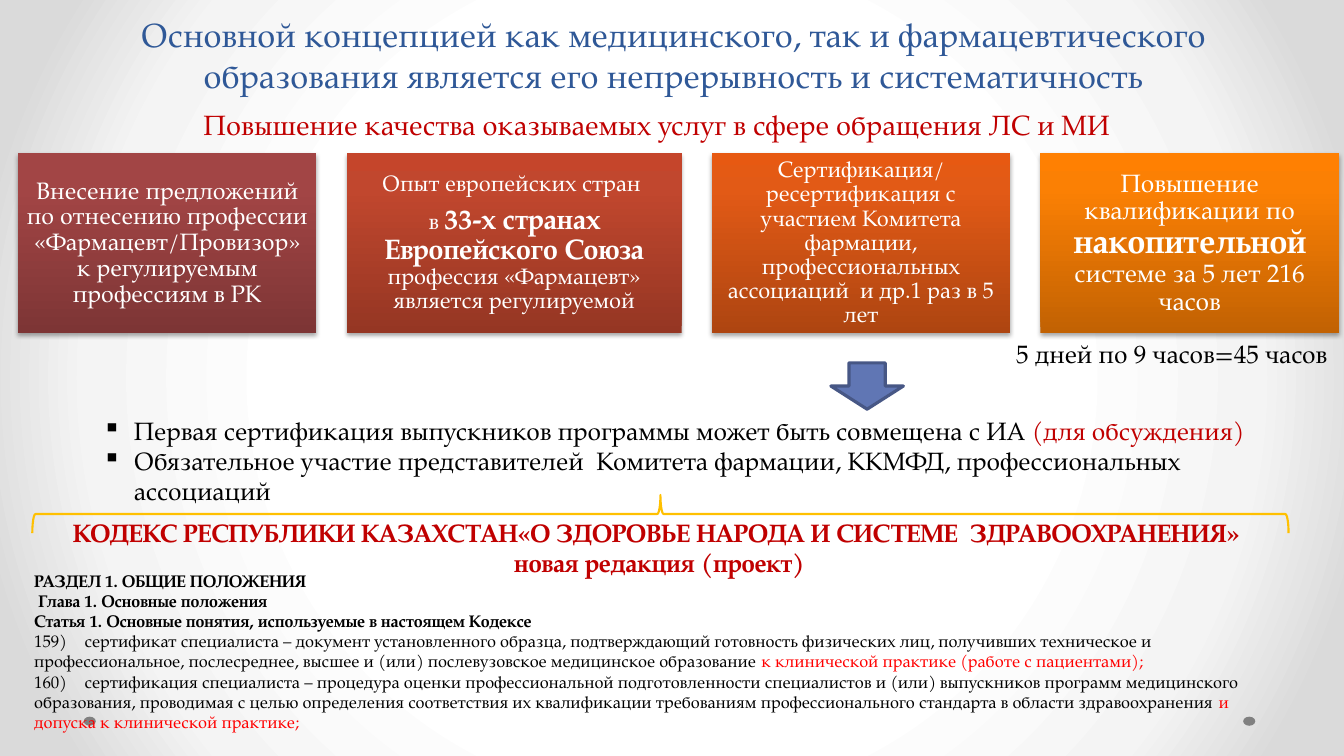
from dataclasses import dataclass

from pptx import Presentation
from pptx.dml.color import RGBColor
from pptx.enum.shapes import MSO_SHAPE
from pptx.enum.text import MSO_ANCHOR, MSO_AUTO_SIZE, PP_ALIGN
from pptx.oxml import parse_xml
from pptx.oxml.ns import nsdecls, qn
from pptx.util import Inches, Pt


@dataclass(frozen=True)
class Theme:
    font: str = "TeX Gyre Pagella"
    title: str = "2F5897"
    accent: str = "C00000"
    highlight: str = "FF0000"
    text: str = "000000"
    light: str = "FFFFFF"
    dot: str = "808080"
    arrow: str = "6076B4"
    arrow_line: str = "475785"
    brace: str = "FFC000"
    title_size: int = 24
    subtitle_size: int = 20
    body_size: int = 18
    card_size: int = 16
    law_size: int = 12


theme = Theme()


def paint_gradient(element, stops, direction):
    """Replace the gradient in element; stops are (percent, colour) pairs."""
    stop_xml = "".join(
        f'<a:gs pos="{percent * 1000}"><a:srgbClr val="{color}"/></a:gs>'
        for percent, color in stops)
    gradient = next(element.iter(qn("a:gradFill")))
    gradient.getparent().replace(gradient, parse_xml(
        f'<a:gradFill {nsdecls("a")} rotWithShape="1">'
        f"<a:gsLst>{stop_xml}</a:gsLst>{direction}</a:gradFill>"))


def write_text(shape, paragraphs, size, color, align=PP_ALIGN.LEFT, bold=False):
    """Fill shape; a paragraph is a list of (text, differing font settings)."""
    frame = shape.text_frame
    frame.word_wrap = True
    frame.auto_size = MSO_AUTO_SIZE.NONE
    for index, runs in enumerate(paragraphs):
        paragraph = frame.paragraphs[0] if index == 0 else frame.add_paragraph()
        paragraph.alignment = align
        paragraph.font.name = theme.font
        paragraph.font.size = Pt(size)
        paragraph.font.bold = bold
        paragraph.font.color.rgb = RGBColor.from_string(color)
        for text, changes in runs:
            run = paragraph.add_run()
            run.text = text
            if "size" in changes:
                run.font.size = Pt(changes["size"])
            if "bold" in changes:
                run.font.bold = changes["bold"]
            if "color" in changes:
                run.font.color.rgb = RGBColor.from_string(changes["color"])


presentation = Presentation()
presentation.slide_width = Inches(13.33)
presentation.slide_height = Inches(7.5)
slide = presentation.slides.add_slide(presentation.slide_layouts[5])
shapes = slide.shapes

# Background
slide.background.fill.gradient()
paint_gradient(
    slide.element, [(50, "FFFFFF"), (76, "F4F4F4"), (92, "DADADA")],
    '<a:path path="circle"><a:fillToRect l="50000" t="50000" r="50000" b="50000"/></a:path>')

# Corner dots
for left in (0.83, 12.33):
    dot = shapes.add_shape(
        MSO_SHAPE.OVAL, Inches(left), Inches(7.11), Inches(0.12), Inches(0.09))
    dot.shadow.inherit = False
    dot.fill.solid()
    dot.fill.fore_color.rgb = RGBColor.from_string(theme.dot)
    dot.line.fill.background()

# Title
title = shapes.title
title.left, title.top = Inches(0.68), Inches(-0.16)
title.width, title.height = Inches(12), Inches(1.15)
title.text_frame.vertical_anchor = MSO_ANCHOR.BOTTOM
write_text(title, [[(
    "Основной концепцией как медицинского, так и фармацевтического "
    "образования является его непрерывность и систематичность", {})]],
    theme.title_size, theme.title, PP_ALIGN.CENTER)

# Cards: width, text size, gradient colours from bottom to top, paragraphs
cards = [
    (2.96, 17, ("7D3535", "A24545", "A44343"), [[(
        "Внесение предложений по отнесению профессии «Фармацевт/Провизор» "
        "к регулируемым профессиям в РК", {})]]),
    (3.32, theme.card_size, ("953623", "C1472E", "C5452B"), [
        [("Опыт европейских стран ", {})],
        [("в ", {}),
         ("33-х странах Европейского Союза", {"size": 20, "bold": True}),
         (" ", {"size": 18, "bold": True}),
         ("профессия «Фармацевт» является регулируемой", {})]]),
    (2.96, theme.card_size, ("AE4511", "E25A16", "E75912"), [[(
        "Сертификация/ресертификация с участием Комитета фармации, "
        "профессиональных ассоциаций  и др.1 раз в 5 лет", {})]]),
    (2.96, theme.body_size, ("C26203", "FB8004", "FF8002"), [[
        ("Повышение квалификации по ", {}),
        ("накопительной ", {"size": 24, "bold": True}),
        ("системе за 5 лет 216 часов", {})]]),
]
card_gap = 0.3
card_left = 0.18
for width, size, colors, paragraphs in cards:
    card = shapes.add_shape(
        MSO_SHAPE.RECTANGLE, Inches(card_left), Inches(1.52), Inches(width), Inches(1.78))
    card_left += width + card_gap
    card.line.fill.background()
    card.fill.gradient()
    paint_gradient(card.element, zip((0, 80, 100), colors), '<a:lin ang="16200000" scaled="0"/>')
    card.shadow.inherit = False
    next(card.element.iter(qn("a:effectLst"))).append(parse_xml(
        f'<a:outerShdw {nsdecls("a")} blurRad="{Pt(3.1)}" dist="{Pt(1.8)}" dir="5400000" '
        'rotWithShape="0"><a:srgbClr val="000000"><a:alpha val="35000"/></a:srgbClr>'
        "</a:outerShdw>"))
    frame = card.text_frame
    frame.vertical_anchor = MSO_ANCHOR.MIDDLE
    frame.margin_left = frame.margin_right = Inches(0.07)
    frame.margin_top = frame.margin_bottom = Inches(0.07)
    write_text(card, paragraphs, size, theme.light, PP_ALIGN.CENTER)
    for paragraph in frame.paragraphs:
        paragraph.line_spacing = 0.9
        paragraph.space_after = Pt(6)

# Text blocks: position, size, colour, alignment, bold, paragraphs
law_plain = {"bold": False}
law_red = {"bold": False, "color": theme.highlight}
text_blocks = [
    ((0.24, 5.61, 12.61, 1.72), theme.law_size, theme.text, PP_ALIGN.LEFT, True, [
        [("РАЗДЕЛ 1. ОБЩИЕ ПОЛОЖЕНИЯ", {})],
        [(" Глава 1. Основные положения", {})],
        [("Статья 1. Основные понятия, используемые в настоящем Кодексе", {})],
        [("159)\tсертификат специалиста – документ установленного образца, подтверждающий "
          "готовность физических лиц, получивших техническое и профессиональное, послесреднее, "
          "высшее и (или) послевузовское медицинское образование ", law_plain),
         ("к клинической практике (работе с пациентами);", law_red)],
        [("160)\tсертификация специалиста – процедура оценки профессиональной подготовленности "
          "специалистов и (или) выпускников программ медицинского образования, проводимая с "
          "целью определения соответствия их квалификации требованиям профессионального "
          "стандарта в области здравоохранения ", law_plain),
         ("и допуска к клинической практике;", law_red)]]),
    ((0.38, 5.08, 12.32, 0.71), theme.body_size, theme.accent, PP_ALIGN.CENTER, True, [[(
        "КОДЕКС РЕСПУБЛИКИ КАЗАХСТАН«О ЗДОРОВЬЕ НАРОДА И СИСТЕМЕ  ЗДРАВООХРАНЕНИЯ»  "
        "новая редакция (проект)", {})]]),
    ((9.98, 3.31, 3.35, 0.4), theme.body_size, theme.text, PP_ALIGN.LEFT, False,
     [[("5 дней по 9 часов=45 часов", {})]]),
    ((1.92, 1.02, 10.2, 0.44), theme.subtitle_size, theme.accent, PP_ALIGN.LEFT, False,
     [[("Повышение качества оказываемых услуг в сфере обращения ЛС и МИ", {})]]),
    ((0.92, 4.07, 11.93, 1.01), theme.body_size, theme.text, PP_ALIGN.LEFT, False, [
        [("Первая сертификация выпускников программы может быть совмещена с ИА ", {}),
         ("(для обсуждения)", {"color": theme.accent})],
        [("Обязательное участие представителей  Комитета фармации, ККМФД, "
          "профессиональных ассоциаций", {})]]),
]
for position, size, color, align, bold, paragraphs in text_blocks:
    text_box = shapes.add_textbox(*map(Inches, position))
    write_text(text_box, paragraphs, size, color, align, bold)

# Bullets of the certification list, the last text block
for properties in text_box.element.iter(qn("a:pPr")):
    properties.set("marL", str(Inches(0.31)))
    properties.set("indent", str(Inches(-0.31)))
    properties.insert(0, parse_xml(f'<a:buChar {nsdecls("a")} char="▪"/>'))

# Brace over the code heading
brace = shapes.add_shape(
    MSO_SHAPE.LEFT_BRACE, Inches(6.36), Inches(-1.13), Inches(0.38), Inches(12.46))
brace.rotation = 90
brace.shadow.inherit = False
brace.fill.background()
brace.line.color.rgb = RGBColor.from_string(theme.brace)
brace.line.width = Pt(1.5)

# Arrow from the certification card to the list
arrow = shapes.add_shape(
    MSO_SHAPE.DOWN_ARROW, Inches(8.24), Inches(3.6), Inches(0.72), Inches(0.46))
arrow.shadow.inherit = False
arrow.fill.solid()
arrow.fill.fore_color.rgb = RGBColor.from_string(theme.arrow)
arrow.line.color.rgb = RGBColor.from_string(theme.arrow_line)
arrow.line.width = Pt(2.25)

presentation.save("out.pptx")
